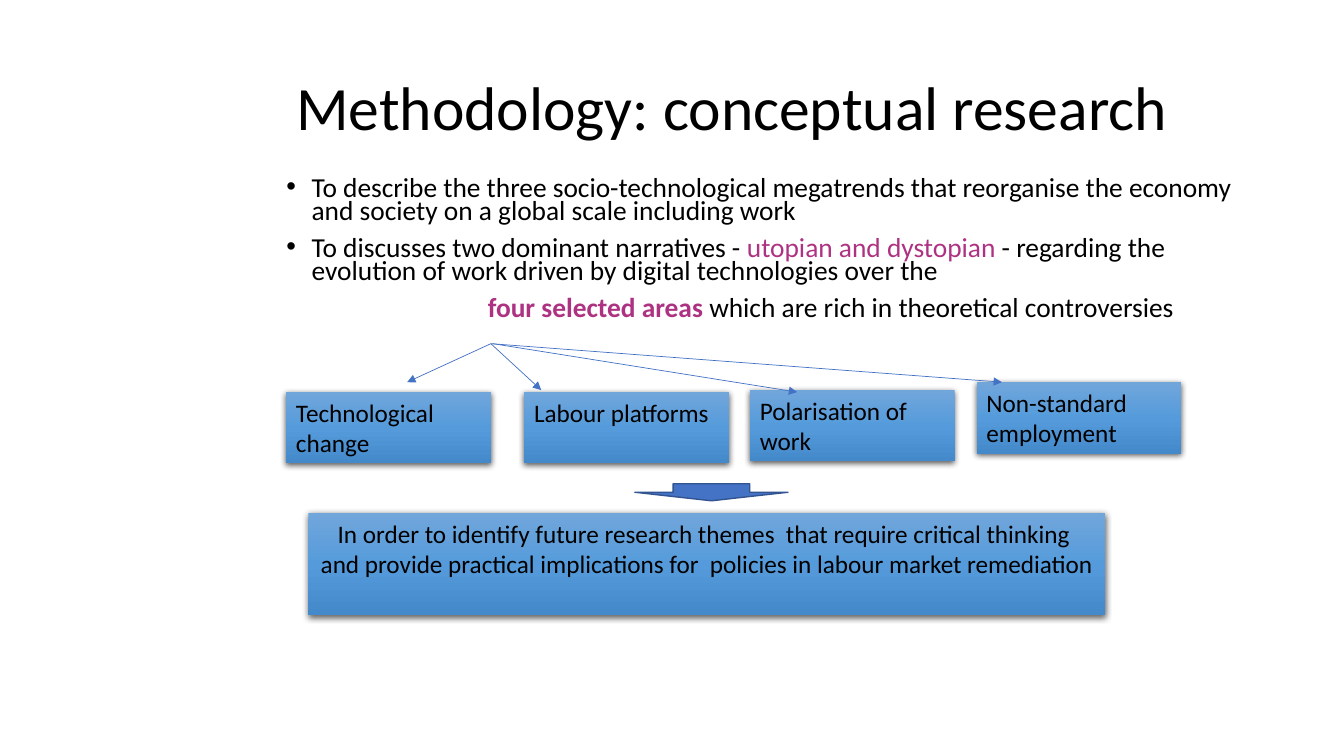
from lxml import etree
from pptx import Presentation
from pptx.dml.color import RGBColor
from pptx.enum.shapes import MSO_CONNECTOR, MSO_SHAPE
from pptx.enum.text import MSO_ANCHOR, MSO_AUTO_SIZE, PP_ALIGN
from pptx.oxml.ns import qn
from pptx.util import Cm, Pt

RECTANGLE, DOWN_ARROW = MSO_SHAPE.RECTANGLE, MSO_SHAPE.DOWN_ARROW
STRAIGHT = MSO_CONNECTOR.STRAIGHT
TOP, MIDDLE = MSO_ANCHOR.TOP, MSO_ANCHOR.MIDDLE
LEFT, CENTER = PP_ALIGN.LEFT, PP_ALIGN.CENTER
NO_AUTOFIT = MSO_AUTO_SIZE.NONE

BLACK = RGBColor(0x00, 0x00, 0x00)
MAGENTA = RGBColor(0xAE, 0x32, 0x82)
BLUE = RGBColor(0x44, 0x72, 0xC4)
DARK_BLUE = RGBColor(0x32, 0x54, 0x91)
GRADIENT = [(0, RGBColor(0x71, 0xA6, 0xDB)),
            (50, RGBColor(0x55, 0x9B, 0xDB)),
            (100, RGBColor(0x44, 0x8A, 0xCA))]
FONT = "Calibri"

# Each paragraph: bulleted or not, then its spans (wording, colour, bold)
BODY = [
    (True, [("To describe the three socio-technological megatrends that reorganise "
             "the economy and society on a global scale including work", BLACK, False)]),
    (True, [("To discusses two dominant narratives - ", BLACK, False),
            ("utopian and dystopian ", MAGENTA, False),
            ("- regarding the evolution of work driven by digital technologies "
             "over the", BLACK, False)]),
    (False, [("four selected areas ", MAGENTA, True),
             ("which are rich in theoretical controversies", BLACK, False)]),
]

# Left and top in cm
AREAS = [("Technological change", 7.21, 9.88),
         ("Labour platforms", 13.21, 9.88),
         ("Polarisation of work", 18.9, 9.83),
         ("Non-standard employment", 24.61, 9.63)]
AREA_SIZE = (5.16, 1.8)
AIM = ("In order to identify future research themes  that require critical thinking "
       " and provide practical implications for  policies in labour market remediation")

# Start and end points in cm
ARROWS = [((12.37, 8.66), (10.26, 9.63)),
          ((12.37, 8.66), (25.25, 9.63)),
          ((12.37, 8.66), (13.64, 9.83)),
          ((12.42, 8.66), (20.09, 9.88))]


def format_span(span, size, color=BLACK, bold=False):
    span.font.name = FONT
    span.font.size = Pt(size)
    span.font.bold = bold
    span.font.color.rgb = color


def place(shape, left, top, width, height):
    shape.left, shape.top = Cm(left), Cm(top)
    shape.width, shape.height = Cm(width), Cm(height)


def fill_title(title):
    place(title, 7.21, 1.73, 24.77, 2.11)
    frame = title.text_frame
    frame.text = "Methodology: conceptual research"
    frame.auto_size = NO_AUTOFIT
    frame.vertical_anchor = MIDDLE
    para = frame.paragraphs[0]
    para.alignment = LEFT
    para.line_spacing = 0.9
    format_span(para.runs[0], 44)


def set_bullet(para, bulleted):
    properties = para._p.get_or_add_pPr()
    margin, indent = (Cm(0.64), Cm(-0.64)) if bulleted else (Cm(5.08), 0)
    properties.set("marL", str(margin))
    properties.set("indent", str(indent))
    if bulleted:
        etree.SubElement(properties, qn("a:buFont"), typeface="Arial")
        etree.SubElement(properties, qn("a:buChar"), char="•")
    else:
        etree.SubElement(properties, qn("a:buNone"))


def fill_body(body):
    place(body, 6.96, 4.39, 24.77, 4.67)
    frame = body.text_frame
    frame.auto_size = NO_AUTOFIT
    frame.vertical_anchor = TOP
    for number, (bulleted, spans) in enumerate(BODY):
        para = frame.add_paragraph() if number else frame.paragraphs[0]
        set_bullet(para, bulleted)
        para.alignment = LEFT
        para.line_spacing = 0.7
        para.space_before = Pt(10 if number else 0)
        for wording, color, bold in spans:
            span = para.add_run()
            span.text = wording
            format_span(span, 19.6, color, bold)


def add_plain_shape(slide, kind, left, top, width, height):
    shape = slide.shapes.add_shape(kind, Cm(left), Cm(top), Cm(width), Cm(height))
    shape.shadow.inherit = False
    return shape


def set_gradient(shape):
    shape.fill.gradient()
    shape.fill.gradient_angle = 270
    stops = shape._element.spPr.find(".//" + qn("a:gsLst"))
    for stop in list(stops):
        stops.remove(stop)
    for percent, color in GRADIENT:
        stop = etree.SubElement(stops, qn("a:gs"), pos=str(percent * 1000))
        etree.SubElement(stop, qn("a:srgbClr"), val=str(color))


def set_shadow(shape):
    effects = shape._element.spPr.find(qn("a:effectLst"))
    shadow = etree.SubElement(effects, qn("a:outerShdw"), blurRad=str(Pt(4.5)),
                              dist=str(Pt(1.5)), dir="5400000", rotWithShape="0")
    color = etree.SubElement(shadow, qn("a:srgbClr"), val=str(BLACK))
    etree.SubElement(color, qn("a:alpha"), val="63000")


def add_box(slide, wording, left, top, width, height, alignment=LEFT):
    box = add_plain_shape(slide, RECTANGLE, left, top, width, height)
    set_gradient(box)
    box.line.fill.background()
    set_shadow(box)
    frame = box.text_frame
    frame.text = wording
    frame.word_wrap = True
    frame.vertical_anchor = TOP
    para = frame.paragraphs[0]
    para.alignment = alignment
    format_span(para.runs[0], 18)


def add_arrow(slide, start, end):
    points = [Cm(value) for value in start + end]
    arrow = slide.shapes.add_connector(STRAIGHT, *points)
    arrow.line.color.rgb = BLUE
    arrow.line.width = Pt(0.5)
    etree.SubElement(arrow.line._get_or_add_ln(), qn("a:tailEnd"), type="triangle")
    etree.SubElement(arrow._element.spPr, qn("a:effectLst"))


def add_down_arrow(slide):
    arrow = add_plain_shape(slide, DOWN_ARROW, 16, 12.19, 3.86, 0.43)
    arrow.fill.solid()
    arrow.fill.fore_color.rgb = BLUE
    arrow.line.color.rgb = DARK_BLUE
    arrow.line.width = Pt(1)


def main():
    deck = Presentation()
    deck.slide_width, deck.slide_height = Cm(33.87), Cm(19.05)
    slide = deck.slides.add_slide(deck.slide_layouts[1])

    # Title and list
    fill_title(slide.shapes.title)
    fill_body(slide.placeholders[1])

    # The four areas and the aim
    for wording, left, top in AREAS:
        add_box(slide, wording, left, top, *AREA_SIZE)
    add_box(slide, AIM, 7.77, 12.93, 20.09, 2.57, CENTER)

    # Arrows
    for start, end in ARROWS:
        add_arrow(slide, start, end)
    add_down_arrow(slide)

    deck.save("out.pptx")


if __name__ == "__main__":
    main()
